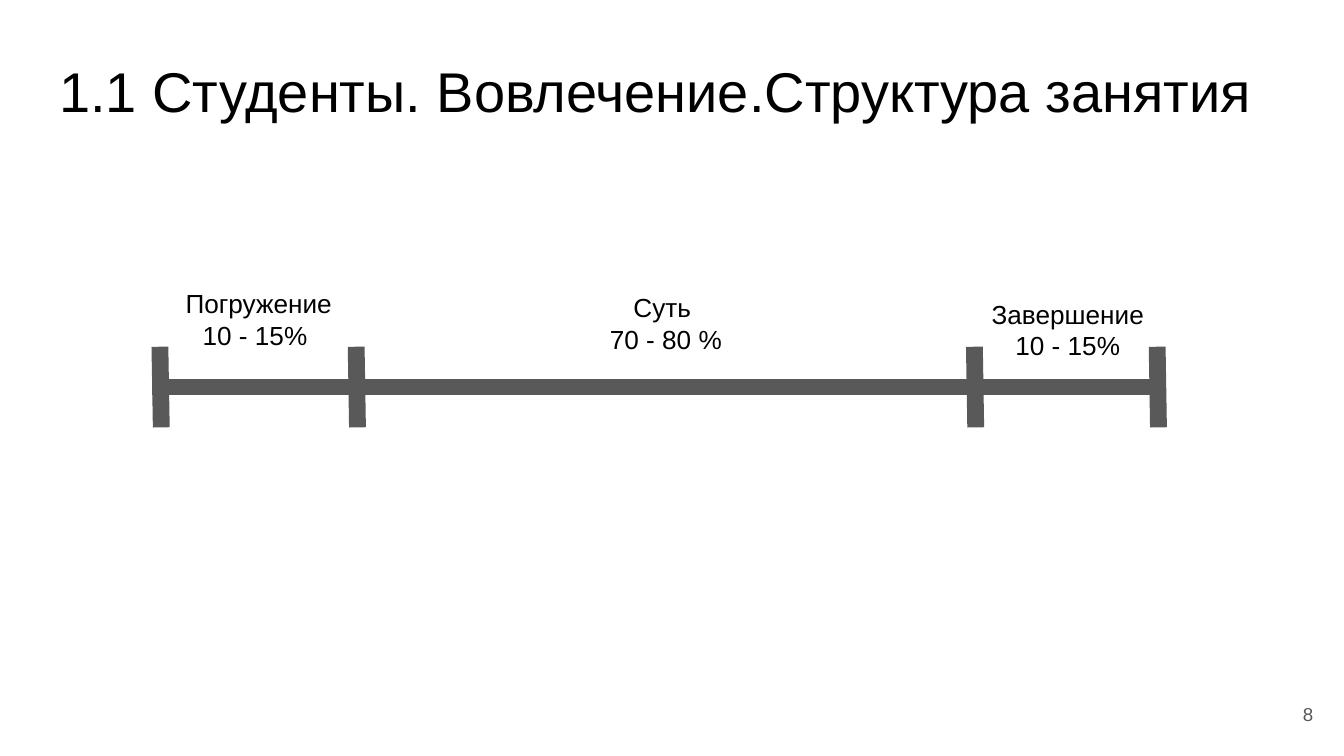
import pptx
import pptx.dml.color
import pptx.enum.shapes
import pptx.enum.text
import pptx.util
import lxml.etree

Inches = pptx.util.Inches
Align = pptx.enum.text.PP_ALIGN
Anchor = pptx.enum.text.MSO_ANCHOR

WIDTH = 10
HEIGHT = WIDTH * 9 / 16
THEME = {
    "font": "Arial",
    "text": pptx.dml.color.RGBColor.from_string("000000"),
    "grey": pptx.dml.color.RGBColor.from_string("595959"),
    "title": 30, "label": 14, "number": 10, "line": 9,
}


def write(box, place, text, size, color, align, anchor=Anchor.TOP):
    """Place a text box or placeholder and format its text."""
    for name, value in zip(("left", "top", "width", "height"), place):
        setattr(box, name, Inches(value))
    frame = box.text_frame
    frame.text = text
    margins = {f"margin_{side}": Inches(0.1) for side in ("left", "top", "right", "bottom")}
    formats = {"word_wrap": True, "vertical_anchor": anchor,
               "auto_size": pptx.enum.text.MSO_AUTO_SIZE.NONE, **margins}
    for name, value in formats.items():
        setattr(frame, name, value)
    for para in frame.paragraphs:
        para.alignment = align
        for span in para.runs:
            for name, value in {"name": THEME["font"], "size": pptx.util.Pt(THEME[size])}.items():
                setattr(span.font, name, value)
            span.font.color.rgb = THEME[color]


def draw_line(page, x1, y1, x2, y2):
    """Draw a thick grey line without a shadow."""
    line = page.shapes.add_connector(
        pptx.enum.shapes.MSO_CONNECTOR.STRAIGHT, *map(Inches, (x1, y1, x2, y2)))
    line.line.color.rgb = THEME["grey"]
    line.line.width = pptx.util.Pt(THEME["line"])
    lxml.etree.SubElement(line._element.spPr, pptx.oxml.ns.qn("a:effectLst"))


deck = pptx.Presentation()
deck.slide_width, deck.slide_height = Inches(WIDTH), Inches(HEIGHT)
page = deck.slides.add_slide(deck.slide_layouts[5])

# Title
margin = 0.034 * WIDTH
write(page.shapes.title, (margin, 0.32, WIDTH - 2 * margin, 0.63),
      "1.1 Студенты. Вовлечение.Структура занятия", "title", "text", Align.LEFT)

# Slide number
write(page.shapes.add_textbox(0, 0, 0, 0), (9.27, 5.1, 0.06 * WIDTH, 0.43),
      "8", "number", "grey", Align.RIGHT, Anchor.MIDDLE)

# Timeline: axis and slightly tilted ticks at the stage borders
axis_y, half_tick, tilt = 2.88, 0.3, 0.01
ticks = [1.19, 2.65, 7.25, 8.61]
draw_line(page, 1.13, axis_y, ticks[-1], axis_y)
for x in ticks:
    draw_line(page, x, axis_y - half_tick, x + tilt, axis_y + half_tick)

# Stage labels
stages = [
    ((1.2, 2.04, 1.45, 0.6), "Погружение\n10 - 15% "),
    ((3.2, 2.07, 3.51, 0.55), "Суть \v70 - 80 %"),
    ((7.25, 2.12, 1.39, 0.63), "Завершение\n10 - 15%"),
]
for place, text in stages:
    write(page.shapes.add_textbox(0, 0, 0, 0), place, text, "label", "text", Align.CENTER)

deck.save("out.pptx")
